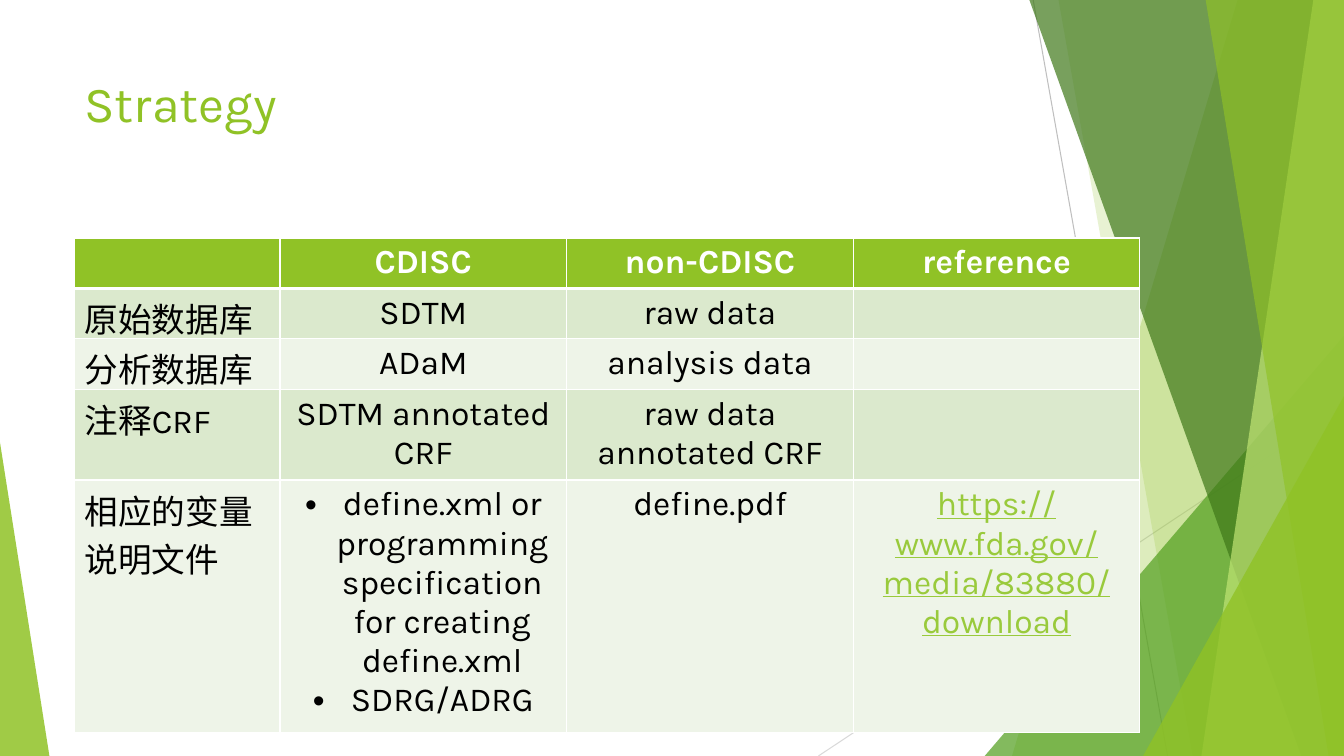
from dataclasses import dataclass

from lxml import etree
from pptx import Presentation
from pptx import util as u
from pptx.dml.color import RGBColor
from pptx.enum import shapes, text
from pptx.oxml.ns import qn

Pt = u.Pt


@dataclass(frozen=True)
class Theme:
    font: str = "Karla"
    title_size: int = 36
    table_size: int = 24
    accent: str = "90C226"
    mid: str = "54A021"
    dark: str = "3F7819"
    light: str = "C0E474"
    link: str = "99CA3C"
    ink: str = "000000"
    white: str = "FFFFFF"
    bands: tuple = ("DBE9CD", "EEF4E8")
    rule_dark: str = "BFBFBF"
    rule_light: str = "D9D9D9"


T = Theme()
WIDTH, HEIGHT = 960, 540
CENTER = text.PP_ALIGN.CENTER

HEADER = ["", "CDISC", "non-CDISC", "reference"]
ROWS = [
    ["原始数据库", "SDTM", "raw data", ""],
    ["分析数据库", "ADaM", "analysis data", ""],
    ["注释CRF", "SDTM annotated CRF", "raw data annotated CRF", ""],
    ["相应的变量说明文件",
     ["define.xml or programming specification for creating define.xml", "SDRG/ADRG"],
     "define.pdf", "https://www.fda.gov/media/83880/download"],
]


def rgb(color):
    return RGBColor.from_string(color)


def add_run(p, words, size, color, bold=False, underline=False):
    r = p.add_run()
    r.text = words
    f = r.font
    f.name, f.size, f.bold = T.font, Pt(size), bold
    f.color.rgb = rgb(color)
    if underline:
        f.underline = True


def paint(sp, color, opacity):
    """Fill a shape with a see-through colour, no outline or shadow."""
    sp.shadow.inherit = False
    sp.line.fill.background()
    sp.fill.solid()
    sp.fill.fore_color.rgb = rgb(color)
    clr = sp.fill.fore_color._xFill.find(qn("a:srgbClr"))
    etree.SubElement(clr, qn("a:alpha"), val=str(opacity * 1000))


# Background facets
def add_rule(s, start, end, color):
    line = s.shapes.add_connector(shapes.MSO_CONNECTOR.STRAIGHT,
                                  *(Pt(v) for v in start + end))
    line.line.color.rgb = rgb(color)
    line.line.width = Pt(0.75)
    etree.SubElement(line._element.spPr, qn("a:effectLst"))


def add_band(s, box, top_inset, bottom_inset, color, opacity):
    """Four-sided band along the right edge; insets run leftwards from it."""
    x, y, w, h = box
    right, top, bottom = x + w, y - 0.6, y + h
    fb = s.shapes.build_freeform(Pt(right - top_inset), Pt(top))
    fb.add_line_segments([(Pt(right), Pt(top)), (Pt(right), Pt(bottom)),
                          (Pt(right - bottom_inset), Pt(bottom))], close=True)
    paint(fb.convert_to_shape(), color, opacity)


def add_corner(s, box, w, h, color, opacity, apex=1):
    """Right triangle in a bottom corner: apex 1 is right, 0 is left."""
    left = box[0] + apex * (box[2] - w)
    sp = s.shapes.add_shape(shapes.MSO_SHAPE.ISOSCELES_TRIANGLE, Pt(left),
                            Pt(box[1] + box[3] - h), Pt(w), Pt(h))
    sp.adjustments[0] = apex
    paint(sp, color, opacity)


def draw_facets(s, box):
    x, y, w, h = box
    add_rule(s, (x + w - 222, y), (x + w - 126, y + h), T.rule_dark)
    add_rule(s, (x + w, y + 290.2), (x + w - 375.4, y + h), T.rule_light)
    for add, a, b, color, opacity in [
        (add_band, 75.8, 237.1, T.accent, 30),
        (add_band, 204, 108.2, T.accent, 20),
        (add_corner, 256.6, 300.2, T.mid, 72),
        (add_band, 224.9, 30.5, T.dark, 70),
        (add_band, 21.8, 101.8, T.light, 70),
        (add_band, 98.9, 11, T.accent, 65),
        (add_corner, 143.5, 257, T.accent, 80),
    ]:
        add(s, box, a, b, color, opacity)
    add_corner(s, box, 35.3, 223.9, T.accent, 85, apex=0)


# Title
def draw_title(s, box, words):
    tf = s.shapes.add_textbox(*(Pt(v) for v in box)).text_frame
    tf.word_wrap = True
    tf.vertical_anchor = text.MSO_ANCHOR.TOP
    add_run(tf.paragraphs[0], words, T.title_size, T.accent)


# Table
def set_borders(cell, **widths):
    tc_pr = cell._tc.get_or_add_tcPr()
    for i, side in enumerate("LRTB"):
        ln = etree.Element(qn("a:ln" + side), w=str(Pt(widths.get(side, 1))))
        fill = etree.SubElement(ln, qn("a:solidFill"))
        etree.SubElement(fill, qn("a:srgbClr"), val=T.white)
        tc_pr.insert(i, ln)


def add_bullet(p):
    p_pr = p._p.get_or_add_pPr()
    p_pr.set("marL", str(Pt(27)))
    p_pr.set("indent", str(-Pt(27)))
    etree.SubElement(p_pr, qn("a:buFont"), typeface="Arial")
    etree.SubElement(p_pr, qn("a:buChar"), char="•")


def fill_cell(cell, content, row, col):
    header = row == 0
    cell.fill.solid()
    cell.fill.fore_color.rgb = rgb(T.accent if header else T.bands[(row - 1) % 2])
    set_borders(cell, B=3 if header else 1, T=3 if row == 1 else 1)
    bulleted = isinstance(content, list)
    tf = cell.text_frame
    for i, words in enumerate(content if bulleted else [content]):
        p = tf.add_paragraph() if i else tf.paragraphs[0]
        if col:
            p.alignment = CENTER
        if bulleted:
            add_bullet(p)
        if words:
            link = words.startswith("https:")
            color = T.white if header else T.link if link else T.ink
            add_run(p, words, T.table_size, color, bold=header, underline=link)


def draw_table(s, box, rows):
    x, y, w, row_h = box
    first_w = 146.7
    n = len(rows[0])
    frame = s.shapes.add_table(len(rows), n, Pt(x), Pt(y), Pt(w), Pt(row_h * len(rows)))
    table = frame.table
    for j, column in enumerate(table.columns):
        column.width = Pt((w - first_w) / (n - 1) if j else first_w)
    for i, row in enumerate(rows):
        table.rows[i].height = Pt(row_h)  # rows grow with their text
        for j, content in enumerate(row):
            fill_cell(table.cell(i, j), content, i, j)


def main():
    prs = Presentation()
    prs.slide_width, prs.slide_height = Pt(WIDTH), Pt(HEIGHT)
    s = prs.slides.add_slide(prs.slide_layouts[6])
    draw_facets(s, (0, 0, WIDTH, HEIGHT))
    draw_title(s, (53.3, 48, 677, 104), "Strategy")
    draw_table(s, (53.3, 170, 761, 29.2), [HEADER] + ROWS)
    prs.save("out.pptx")


if __name__ == "__main__":
    main()
